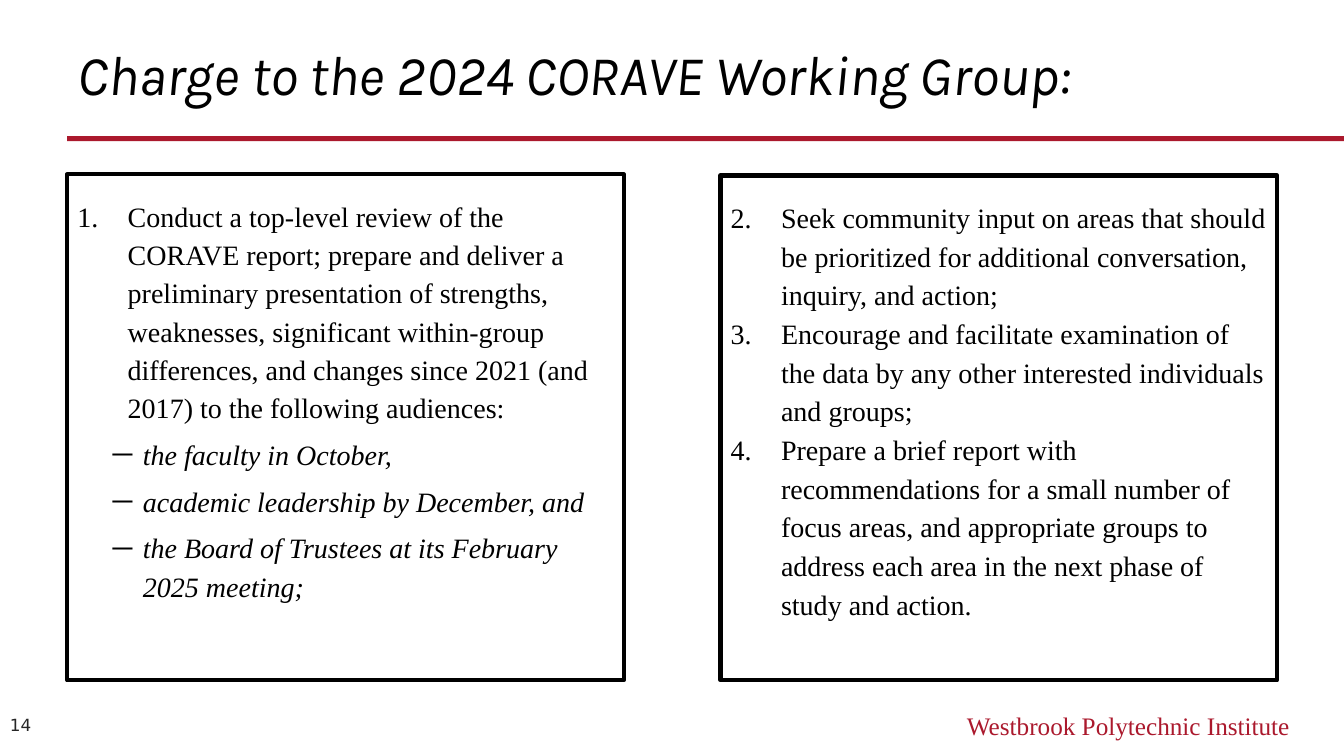
from lxml.etree import SubElement
from pptx import Presentation
from pptx.dml.color import RGBColor
from pptx.enum.shapes import MSO_SHAPE
from pptx.enum.text import MSO_ANCHOR, MSO_AUTO_SIZE, PP_ALIGN
from pptx.oxml.ns import qn
from pptx.util import Inches, Pt

COLORS = {"red": "AB192D", "text": "000000", "number": "262626"}
SERIF = "Times New Roman"
WIDTH, HEIGHT = 13.33, 7.5
MARGIN = WIDTH / 20
PANEL_WIDTH, PANEL_GAP = 5.52, 0.96
PANEL_TOP, PANEL_HEIGHT = 1.73, 5.02

# Each item: kind, text
LEFT_ITEMS = [
    ("number", "Conduct a top-level review of the CORAVE report; prepare and deliver a "
     "preliminary presentation of strengths, weaknesses, significant within-group "
     "differences, and changes since 2021 (and 2017) to the following audiences:"),
    ("dash", "the faculty in October,"),
    ("dash", "academic leadership by December, and"),
    ("dash", "the Board of Trustees at its February 2025 meeting;"),
]
RIGHT_ITEMS = [
    ("number", "Seek community input on areas that should be prioritized for additional "
     "conversation, inquiry, and action;"),
    ("number", "Encourage and facilitate examination of the data by any other interested "
     "individuals and groups;"),
    ("number", "Prepare a brief report with recommendations for a small number of focus "
     "areas, and appropriate groups to address each area in the next phase of study "
     "and action."),
]


def color(name):
    return RGBColor.from_string(COLORS[name])


def place(shape, box):
    shape.left, shape.top, shape.width, shape.height = map(Inches, box)


def add_run(paragraph, text, size, font, color_name, italic=False):
    run = paragraph.add_run()
    run.text = text
    run.font.size = Pt(size)
    run.font.name = font
    run.font.italic = italic
    run.font.color.rgb = color(color_name)


def set_bullet(paragraph, kind, start):
    """Give the paragraph a hanging indent with a number or a dash."""
    indent, hanging = (0.5, 0.5) if kind == "number" else (0.65, 0.3)
    properties = paragraph._p.get_or_add_pPr()
    properties.set("marL", str(Inches(indent)))
    properties.set("indent", str(-Inches(hanging)))
    bullet_color = SubElement(properties, qn("a:buClr"))
    SubElement(bullet_color, qn("a:srgbClr"), val=COLORS["text"])
    SubElement(properties, qn("a:buFont"), typeface=SERIF)
    if kind == "number":
        SubElement(properties, qn("a:buAutoNum"), type="arabicPeriod", startAt=str(start))
    else:
        SubElement(properties, qn("a:buChar"), char="─")


def fill_title(title, box, text):
    place(title, box)
    frame = title.text_frame
    frame.auto_size = MSO_AUTO_SIZE.NONE
    frame.word_wrap = False
    frame.vertical_anchor = MSO_ANCHOR.TOP
    paragraph = frame.paragraphs[0]
    paragraph.alignment = PP_ALIGN.LEFT
    add_run(paragraph, text, 40, "Karla", "text", italic=True)


def fill_panel(body, box, items, start, line_spacing):
    """Frame a body placeholder and fill it with its list."""
    place(body, box)
    body.fill.background()
    body.line.color.rgb = color("text")
    body.line.width = Pt(3)
    frame = body.text_frame
    frame.auto_size = MSO_AUTO_SIZE.NONE
    frame.word_wrap = True
    frame.vertical_anchor = MSO_ANCHOR.TOP
    frame.margin_left = frame.margin_right = Inches(0.1)
    frame.margin_top, frame.margin_bottom = Inches(0.2), Inches(0.05)
    for index, (kind, text) in enumerate(items):
        paragraph = frame.add_paragraph() if index else frame.paragraphs[0]
        paragraph.level = int(kind == "dash")
        paragraph.alignment = PP_ALIGN.LEFT
        paragraph.line_spacing = line_spacing
        paragraph.space_before = Pt(6 if kind == "dash" else 0)
        paragraph.space_after = Pt(0)
        set_bullet(paragraph, kind, start)
        add_run(paragraph, text, 20, SERIF, "text", italic=kind == "dash")


def add_rule(slide, box):
    rule = slide.shapes.add_shape(MSO_SHAPE.RECTANGLE, *map(Inches, box))
    rule.shadow.inherit = False
    rule.fill.solid()
    rule.fill.fore_color.rgb = color("red")
    rule.line.fill.background()


def add_label(slide, box, text, size, font, color_name, alignment, anchor):
    frame = slide.shapes.add_textbox(*map(Inches, box)).text_frame
    frame.word_wrap = True
    frame.vertical_anchor = anchor
    paragraph = frame.paragraphs[0]
    paragraph.alignment = alignment
    add_run(paragraph, text, size, font, color_name)


def build_charge_slide(presentation):
    slide = presentation.slides.add_slide(presentation.slide_layouts[3])
    title, left_body, right_body = slide.placeholders

    # Heading and rule
    fill_title(title, (MARGIN, 0.34, 12.08, 1), "Charge to the 2024 CORAVE Working Group:")
    add_rule(slide, (MARGIN, 1.35, WIDTH - MARGIN, 0.05))

    # Two framed lists, the right one continuing the numbering
    right_left = MARGIN + PANEL_WIDTH + PANEL_GAP
    fill_panel(left_body, (MARGIN, PANEL_TOP, PANEL_WIDTH, PANEL_HEIGHT),
               LEFT_ITEMS, 1, 1.14)
    fill_panel(right_body, (right_left, PANEL_TOP + 0.01, PANEL_WIDTH, PANEL_HEIGHT - 0.01),
               RIGHT_ITEMS, 2, 1.15)

    # Footer
    add_label(slide, (0, 6.99, MARGIN, 0.4), "14", 12, "DejaVu Sans", "number",
              PP_ALIGN.LEFT, MSO_ANCHOR.MIDDLE)
    add_label(slide, (8, 7, 4.89, 0.4), "Westbrook Polytechnic Institute", 18, SERIF,
              "red", PP_ALIGN.RIGHT, MSO_ANCHOR.TOP)


def main():
    presentation = Presentation()
    presentation.slide_width = Inches(WIDTH)
    presentation.slide_height = Inches(HEIGHT)
    build_charge_slide(presentation)
    presentation.save("out.pptx")


if __name__ == "__main__":
    main()
